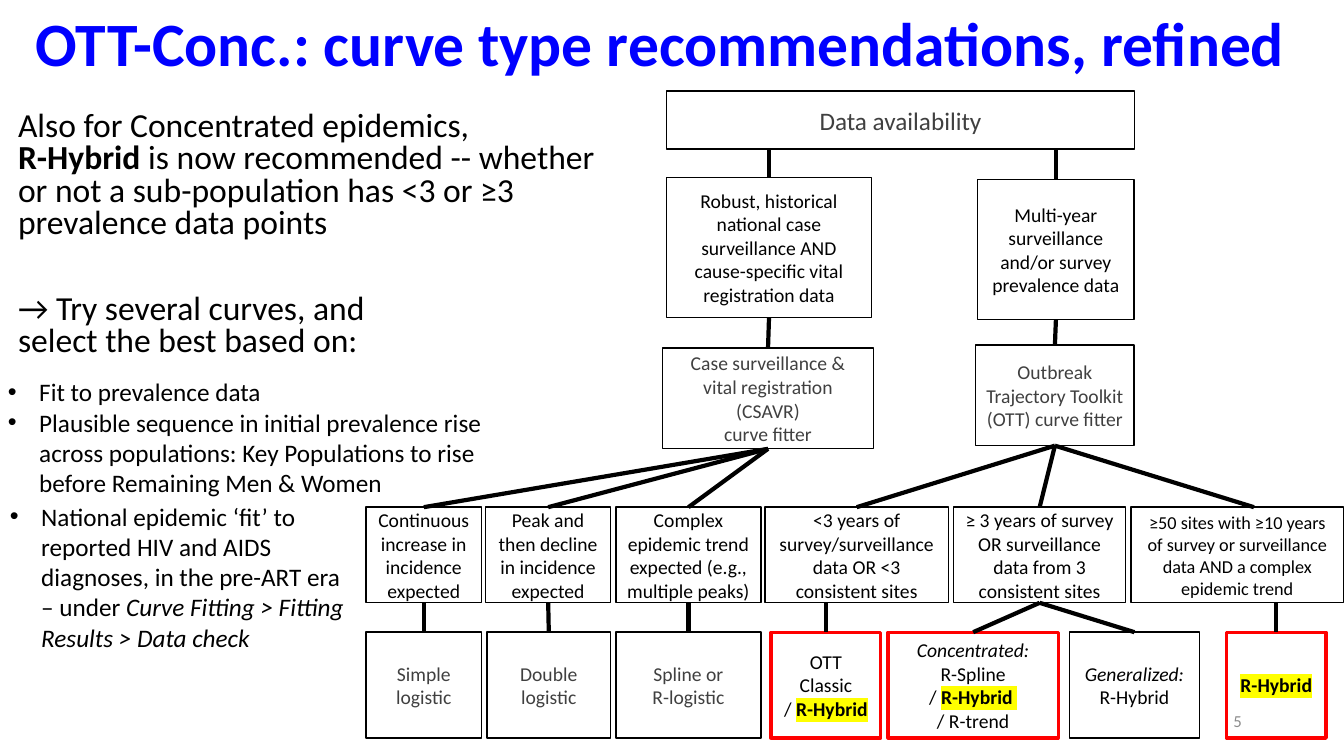
from lxml import etree
from pptx import Presentation
from pptx import util as u
from pptx.dml.color import RGBColor
from pptx.enum import shapes, text
from pptx.oxml import ns

BLACK = RGBColor(0x00, 0x00, 0x00)
DARK_GREY = RGBColor(0x40, 0x40, 0x40)
PAGE_GREY = RGBColor(0x8C, 0x8C, 0x8C)
WHITE = RGBColor(0xFF, 0xFF, 0xFF)
BLUE = RGBColor(0x00, 0x00, 0xFF)
RED = RGBColor(0xFF, 0x00, 0x00)
YELLOW = RGBColor(0xFF, 0xFF, 0x00)
FONT = "Calibri"

# Styles of a text piece: b bold, i italic, h highlighted
HYBRID = ("R-Hybrid", "bh")

ROW_CRITERIA = (10.49, 2.41)  # top, height
ROW_CURVES = (13.64, 2.67)

# Key: left, top, width, height, paragraphs, font colour, outline colour, size
NODES = {
    "data": (7.57, 0, 11.81, 1.47, ["Data availability"], DARK_GREY, BLACK, 18),
    "robust": (7.57, 2.18, 5.18, 3.53, [
        "Robust, historical national case surveillance AND cause-specific "
        "vital registration data"], BLACK, BLACK, 14),
    "multi": (15.42, 2.24, 3.94, 3.53, [
        "Multi-year surveillance and/or survey prevalence data"], BLACK, BLACK, 14),
    "csavr": (7.47, 6.48, 5.33, 2.54, [
        "Case surveillance & vital registration (CSAVR)\vcurve fitter"],
        DARK_GREY, BLACK, 14),
    "toolkit": (15.37, 6.4, 3.99, 2.54, [
        "Outbreak Trajectory Toolkit (OTT) curve fitter"], DARK_GREY, BLACK, 14),
    "continuous": (0, ROW_CRITERIA[0], 2.92, ROW_CRITERIA[1], [
        "Continuous increase in incidence expected"], BLACK, BLACK, 14),
    "peak": (3.02, ROW_CRITERIA[0], 3.15, ROW_CRITERIA[1], [
        "Peak and then decline in incidence expected"], BLACK, BLACK, 14),
    "complex": (6.3, ROW_CRITERIA[0], 3.66, ROW_CRITERIA[1], [
        "Complex epidemic trend expected (e.g., multiple peaks)"], BLACK, BLACK, 14),
    "short": (10.06, ROW_CRITERIA[0], 4.62, ROW_CRITERIA[1], [
        "<3 years of survey/surveillance data OR <3 consistent sites"],
        BLACK, BLACK, 14),
    "long": (14.81, ROW_CRITERIA[0], 4.34, ROW_CRITERIA[1], [
        "≥ 3 years of survey OR surveillance data from 3 consistent sites"],
        BLACK, BLACK, 14),
    "sites": (19.28, ROW_CRITERIA[0], 5.36, ROW_CRITERIA[1], [
        "≥50 sites with ≥10 years of survey or surveillance data AND a complex "
        "epidemic trend"], BLACK, BLACK, 13),
    "simple": (0, ROW_CURVES[0], 2.92, ROW_CURVES[1], ["Simple logistic"],
               DARK_GREY, BLACK, 14),
    "double": (3.05, ROW_CURVES[0], 3.12, ROW_CURVES[1], ["Double logistic"],
               DARK_GREY, BLACK, 14),
    "spline": (6.3, ROW_CURVES[0], 3.66, ROW_CURVES[1], ["Spline or", "R-logistic"],
               DARK_GREY, BLACK, 14),
    "classic": (10.21, ROW_CURVES[0], 2.77, ROW_CURVES[1], [
        [("OTT\vClassic\v/ ", ""), HYBRID]], BLACK, RED, 14),
    "concentrated": (13.16, ROW_CURVES[0], 4.29, ROW_CURVES[1], [
        [("Concentrated:", "i")],
        [("R-Spline\v/ ", ""), ("R-Hybrid ", "bh"), ("\v/ R-trend", "")]],
        BLACK, RED, 14),
    "generalized": (17.73, ROW_CURVES[0], 3.28, ROW_CURVES[1], [
        [("Generalized:", "i"), ("\vR-Hybrid", "")]], BLACK, BLACK, 14),
    "hybrid": (21.69, ROW_CURVES[0], 2.51, ROW_CURVES[1], [[HYBRID]], BLACK, RED, 14),
}

# Lines from bottom middle to top middle
LINKS = [("robust", "csavr"), ("multi", "toolkit"),
         ("csavr", "continuous"), ("csavr", "peak"), ("csavr", "complex"),
         ("toolkit", "short"), ("toolkit", "long"),
         ("continuous", "simple"), ("peak", "double"), ("complex", "spline"),
         ("long", "concentrated"), ("long", "generalized")]
# Vertical lines that leave the upper box away from its middle
DROPS = [("data", "robust"), ("data", "multi"), ("short", "classic"),
         ("sites", "hybrid")]
SITES_ENTRY = 22.38


def style_run(run, size, color, styles=""):
    font = run.font
    font.size, font.color.rgb = u.Pt(size), color
    font.bold, font.italic = "b" in styles, "i" in styles
    if "h" in styles:
        highlight = etree.SubElement(font._element, ns.qn("a:highlight"))
        etree.SubElement(highlight, ns.qn("a:srgbClr"), val=str(YELLOW))
    font.name = FONT


def write(frame, paragraphs, size, color, align=text.PP_ALIGN.LEFT):
    """Fill the frame; a paragraph is a string or a list of (text, styles)."""
    frame.word_wrap = True
    frame.auto_size = text.MSO_AUTO_SIZE.NONE
    for index, content in enumerate(paragraphs):
        paragraph = frame.add_paragraph() if index else frame.paragraphs[0]
        paragraph.alignment = align
        if isinstance(content, str):
            paragraph.text = content
            for run in paragraph.runs:
                style_run(run, size, color)
            continue
        for words, styles in content:
            for number, line in enumerate(words.split("\v")):
                if number:
                    paragraph.add_line_break()
                if line:
                    run = paragraph.add_run()
                    run.text = line
                    style_run(run, size, color, styles)


def place(shape, left, top, width, height):
    shape.left, shape.top = u.Cm(left), u.Cm(top)
    shape.width, shape.height = u.Cm(width), u.Cm(height)


def add_title(slide, *box):
    title = slide.shapes.title
    place(title, *box)
    write(title.text_frame, [[("OTT-Conc.: curve type recommendations, refined", "b")]],
          44, BLUE)
    title.text_frame.vertical_anchor = text.MSO_ANCHOR.MIDDLE
    title.text_frame.paragraphs[0].line_spacing = 0.9


def add_advice(slide, *box):
    advice = slide.placeholders[1]
    place(advice, *box)
    write(advice.text_frame, [
        [("Also for Concentrated epidemics,\v", ""), ("R-Hybrid", "b"),
         (" is now recommended -- whether or not a sub-population has <3 or ≥3 "
          "prevalence data points", "")],
        "→ Try several curves, and\vselect the best based on:"], 24, BLACK)
    for paragraph, gap in zip(advice.text_frame.paragraphs, (10, 38.5)):
        paragraph.line_spacing, paragraph.space_before = 0.8, u.Pt(gap)
        properties = paragraph._p.get_or_add_pPr()
        properties.set("marL", "0")
        properties.set("indent", "0")
        etree.SubElement(properties, ns.qn("a:buNone"))


def add_bullets(slide, items, *box):
    frame = slide.shapes.add_textbox(*map(u.Cm, box)).text_frame
    write(frame, items, 18, BLACK)
    for paragraph in frame.paragraphs:
        properties = paragraph._p.get_or_add_pPr()
        properties.set("marL", str(u.Cm(0.79)))
        properties.set("indent", str(-u.Cm(0.79)))
        etree.SubElement(properties, ns.qn("a:buFont"), typeface="Arial")
        etree.SubElement(properties, ns.qn("a:buChar"), char="•")


def add_node(slide, left, top, width, height, paragraphs, color, outline, size):
    node = slide.shapes.add_shape(shapes.MSO_SHAPE.RECTANGLE,
                                  *map(u.Cm, (left, top, width, height)))
    node.shadow.inherit = False
    node.fill.solid()
    node.fill.fore_color.rgb = WHITE
    node.line.color.rgb = outline
    node.line.width = u.Pt(2.25 if outline == RED else 1)
    write(node.text_frame, paragraphs, size, color, text.PP_ALIGN.CENTER)
    node.text_frame.vertical_anchor = text.MSO_ANCHOR.MIDDLE
    return node


def add_link(slide, upper, lower, start_x=None, end_x=None):
    """Join two boxes; an end with a given x stays free of the side's middle."""
    link = slide.shapes.add_connector(
        shapes.MSO_CONNECTOR.STRAIGHT, start_x or 0, upper.top + upper.height,
        end_x or 0, lower.top)
    if start_x is None:
        link.begin_connect(upper, 2)
    if end_x is None:
        link.end_connect(lower, 0)
    link.line.color.rgb, link.line.width = BLACK, u.Pt(3)
    etree.SubElement(link._element.spPr, ns.qn("a:effectLst"))


def add_decision_tree(slide, left, top):
    nodes = {key: add_node(slide, left + x, top + y, *rest)
             for key, (x, y, *rest) in NODES.items()}
    for upper, lower in LINKS:
        add_link(slide, nodes[upper], nodes[lower])
    for upper, lower in DROPS:
        child = nodes[lower]
        add_link(slide, nodes[upper], child, start_x=child.left + child.width // 2)
    add_link(slide, nodes["toolkit"], nodes["sites"], end_x=u.Cm(left + SITES_ENTRY))


def add_page_number(slide, *box):
    frame = slide.shapes.add_textbox(*map(u.Cm, box)).text_frame
    write(frame, ["5"], 12, PAGE_GREY, text.PP_ALIGN.RIGHT)
    frame.vertical_anchor = text.MSO_ANCHOR.MIDDLE


def main():
    deck = Presentation()
    deck.slide_width, deck.slide_height = u.Cm(33.87), u.Cm(19.05)
    slide = deck.slides.add_slide(deck.slide_layouts[1])
    add_decision_tree(slide, 9.22, 2.29)
    add_page_number(slide, 23.93, 17.65, 7.62, 1.02)
    add_advice(slide, 0.2, 2.69, 15.95, 6.83)
    add_title(slide, 0.64, 0.1, 32.31, 2.16)
    add_bullets(slide, [
        "Fit to prevalence data",
        "Plausible sequence in initial prevalence rise across populations: "
        "Key Populations to rise before Remaining Men & Women"],
        -0.05, 9.37, 12.95, 3.33)
    add_bullets(slide, [[
        ("National epidemic ‘fit’ to reported HIV and AIDS diagnoses, in the "
         "pre-ART era – under ", ""),
        ("Curve Fitting > Fitting Results > Data check", "i")]],
        0, 12.5, 9.17, 4.11)
    deck.save("out.pptx")


if __name__ == "__main__":
    main()
